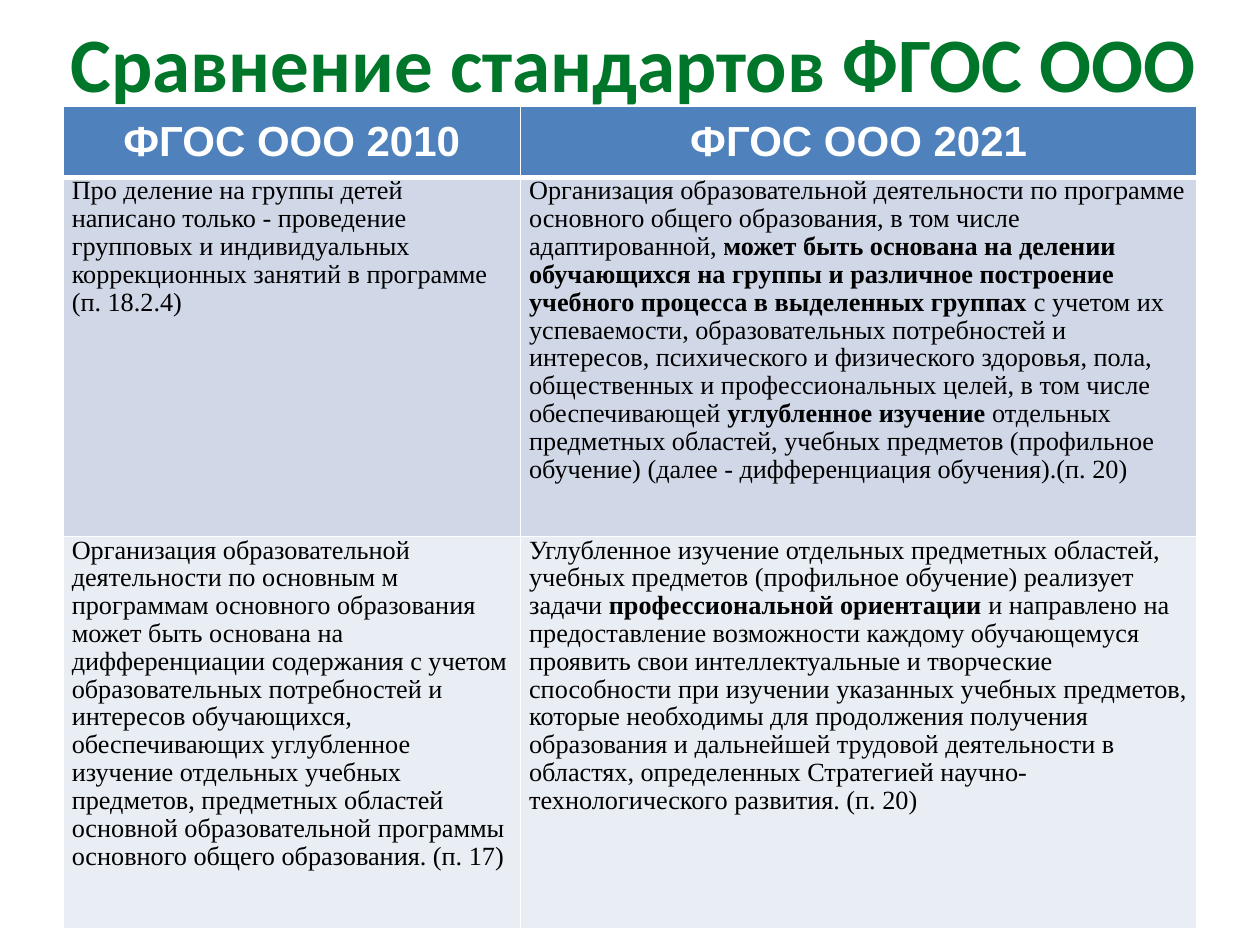
from dataclasses import dataclass

from lxml.etree import SubElement
from pptx import Presentation
from pptx.dml.color import RGBColor as Color
from pptx.enum.text import MSO_ANCHOR as Anchor, MSO_AUTO_SIZE as AutoSize, PP_ALIGN as Align
from pptx.oxml.ns import qn
from pptx.util import Inches, Pt


@dataclass(frozen=True)
class Theme:
    """Colours, fonts and type sizes."""
    title_color: str = "00762A"
    header_fill: str = "4F81BD"
    row_fills: tuple = ("D0D8E8", "E9EDF4")
    light: str = "FFFFFF"
    dark: str = "000000"
    title_font: str = "Calibri"
    header_font: str = "Arial"
    body_font: str = "Times New Roman"
    title_size: float = 44
    header_size: float = 24
    body_size: float = 15
    body_spacing: float = 0.96


class SlideBuilder:
    """Adds styled elements to the current slide."""

    def __init__(self, page, theme):
        self.page = page
        self.theme = theme

    def add_span(self, para, text, font, size, color, bold):
        """Append one formatted run."""
        span = para.add_run()
        span.text = text
        span.font.name = font
        span.font.size = Pt(size)
        span.font.bold = bold
        span.font.color.rgb = Color.from_string(color)

    def add_title(self, text, left, top, width, height):
        """Place and fill the title placeholder."""
        theme = self.theme
        box = self.page.shapes.title
        box.left, box.top, box.width, box.height = map(Inches, (left, top, width, height))
        frame = box.text_frame
        frame.word_wrap = True
        frame.auto_size = AutoSize.NONE
        frame.vertical_anchor = Anchor.MIDDLE
        para = frame.paragraphs[0]
        para.alignment = Align.CENTER
        self.add_span(para, text, theme.title_font, theme.title_size, theme.title_color, True)

    def set_borders(self, cell, bottom):
        """Draw light borders, with a chosen bottom width."""
        props = cell._tc.get_or_add_tcPr()
        for edge, width in (("lnL", 1), ("lnR", 1), ("lnT", 1), ("lnB", bottom)):
            line = SubElement(props, qn(f"a:{edge}"), w=str(Pt(width)))
            fill = SubElement(line, qn("a:solidFill"))
            SubElement(fill, qn("a:srgbClr"), val=self.theme.light)

    def set_fill(self, cell, color):
        """Fill a cell with a solid colour."""
        cell.fill.solid()
        cell.fill.fore_color.rgb = Color.from_string(color)

    def fill_header(self, cell, text):
        """Write a header cell."""
        theme = self.theme
        self.set_borders(cell, 3)
        self.set_fill(cell, theme.header_fill)
        cell.vertical_anchor = Anchor.MIDDLE
        para = cell.text_frame.paragraphs[0]
        para.alignment = Align.CENTER
        self.add_span(para, text, theme.header_font, theme.header_size, theme.light, True)

    def fill_body(self, cell, parts, color):
        """Write a body cell whose every second part is bold."""
        theme = self.theme
        self.set_borders(cell, 1)
        self.set_fill(cell, color)
        cell.margin_left = cell.margin_right = Inches(0.07)
        cell.margin_top = cell.margin_bottom = 0
        para = cell.text_frame.paragraphs[0]
        para.line_spacing = theme.body_spacing
        for index, text in enumerate(parts):
            self.add_span(para, text, theme.body_font, theme.body_size, theme.dark, index % 2 == 1)

    def add_table(self, headers, rows, left, top, widths, heights):
        """Add the comparison table."""
        frame = self.page.shapes.add_table(
            len(heights), len(widths), Inches(left), Inches(top),
            Inches(sum(widths)), Inches(sum(heights)))
        table = frame.table
        for column, width in zip(table.columns, widths):
            column.width = Inches(width)
        for row, height in zip(table.rows, heights):
            row.height = Inches(height)
        for column, text in enumerate(headers):
            self.fill_header(table.cell(0, column), text)
        for number, (row, color) in enumerate(zip(rows, self.theme.row_fills), 1):
            for column, parts in enumerate(row):
                self.fill_body(table.cell(number, column), parts, color)


HEADERS = ("ФГОС ООО 2010", "ФГОС ООО 2021")
ROWS = (
    (
        ("Про деление на группы детей написано только - проведение групповых и "
         "индивидуальных коррекционных занятий в программе (п. 18.2.4)",),
        ("Организация образовательной деятельности по программе основного общего "
         "образования, в том числе адаптированной, ",
         "может быть основана на делении обучающихся на группы и различное построение "
         "учебного процесса в выделенных группах ",
         "с учетом их успеваемости, образовательных потребностей и интересов, психического "
         "и физического здоровья, пола, общественных и профессиональных целей, в том числе "
         "обеспечивающей ",
         "углубленное изучение ",
         "отдельных предметных областей, учебных предметов (профильное обучение) "
         "(далее - дифференциация обучения).(п. 20)"),
    ),
    (
        ("Организация образовательной деятельности по основным м программам основного "
         "образования может быть основана на дифференциации содержания с учетом "
         "образовательных потребностей и интересов обучающихся, обеспечивающих углубленное "
         "изучение отдельных учебных предметов, предметных областей основной "
         "образовательной программы основного общего образования. (п. 17)",),
        ("Углубленное изучение отдельных предметных областей, учебных предметов "
         "(профильное обучение) реализует задачи ",
         "профессиональной ориентации ",
         "и направлено на предоставление возможности каждому обучающемуся проявить свои "
         "интеллектуальные и творческие способности при изучении указанных учебных "
         "предметов, которые необходимы для продолжения получения образования и дальнейшей "
         "трудовой деятельности в областях, определенных Стратегией "
         "научно-технологического развития. (п. 20)"),
    ),
)


def main():
    """Build and save the deck."""
    deck = Presentation()
    deck.slide_width, deck.slide_height = Inches(10), Inches(7.5)
    page = deck.slides.add_slide(deck.slide_layouts[5])
    builder = SlideBuilder(page, Theme())
    builder.add_title("Сравнение стандартов ФГОС ООО", 0.35, 0.3, 9.37, 0.38)
    builder.add_table(HEADERS, ROWS, 0.5, 0.84, (3.63, 5.37), (0.57, 2.85, 3.11))
    deck.save("out.pptx")


if __name__ == "__main__":
    main()
